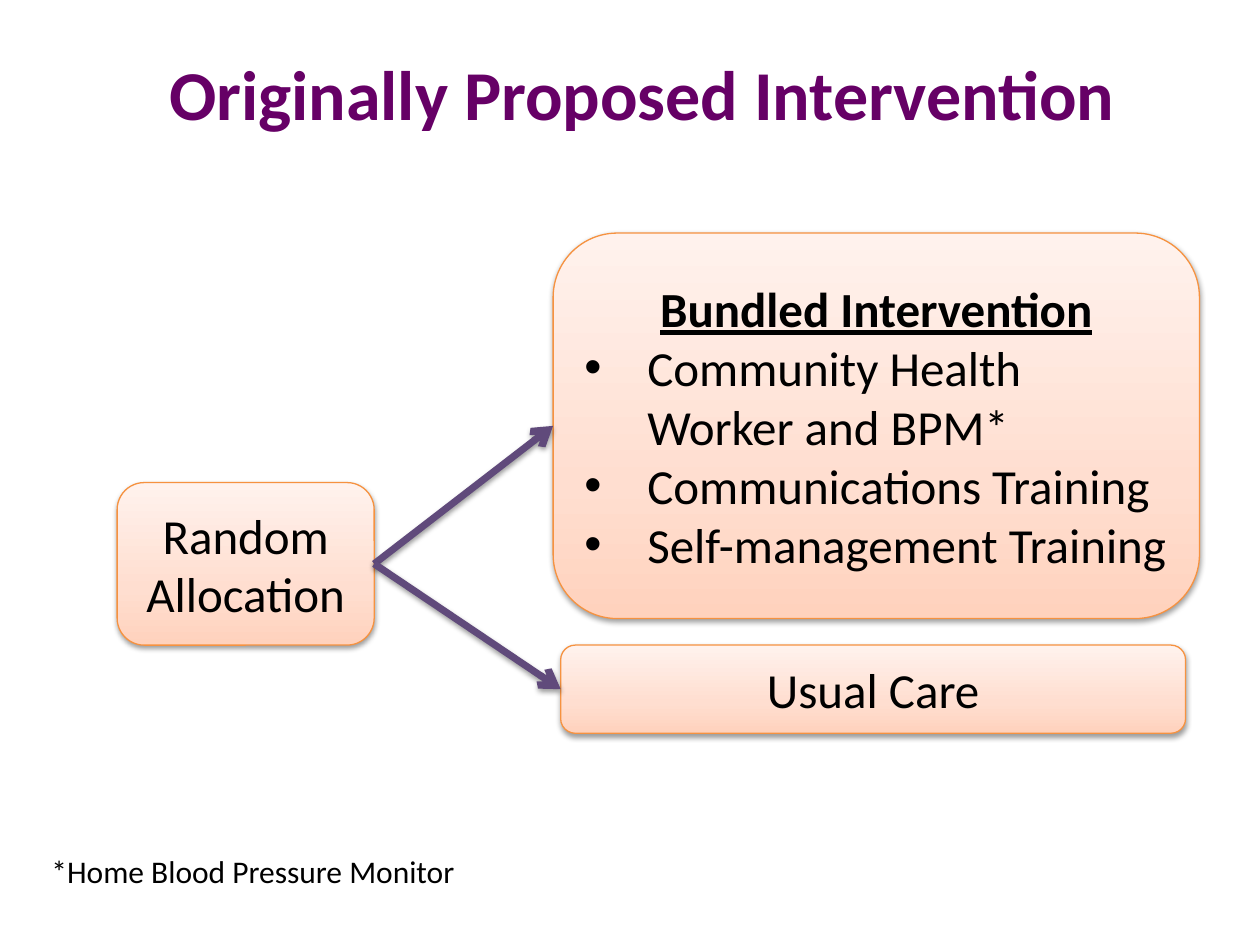
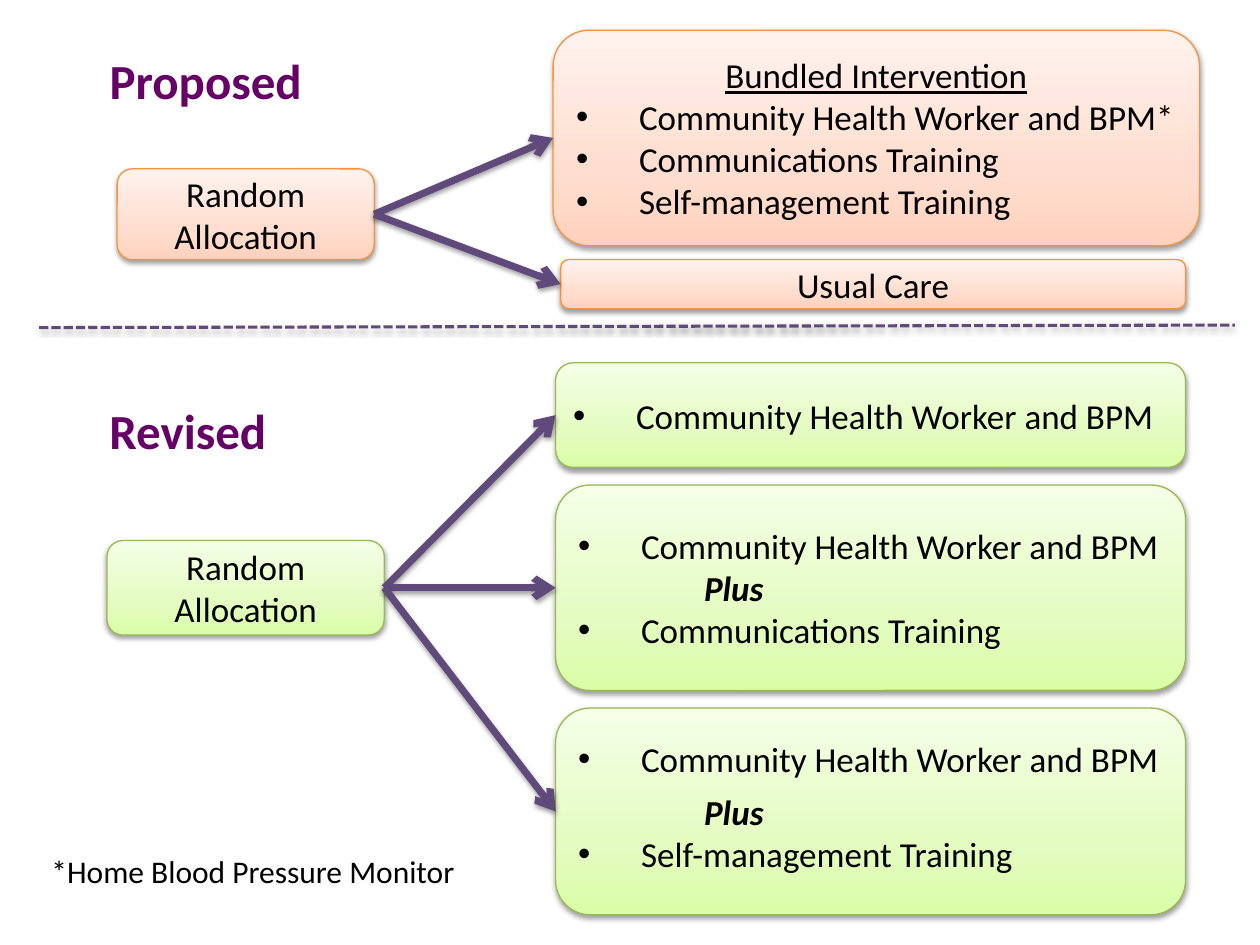
from copy import deepcopy
from dataclasses import dataclass

from lxml import etree
from pptx import Presentation
from pptx.dml.color import RGBColor
from pptx.enum.dml import MSO_LINE
from pptx.enum.shapes import MSO_CONNECTOR, MSO_SHAPE
from pptx.enum.text import MSO_ANCHOR, MSO_AUTO_SIZE, PP_ALIGN
from pptx.oxml.ns import qn
from pptx.util import Pt

PX = 9144  # EMU per px, 100 px to the inch
LEFT, CENTER = PP_ALIGN.LEFT, PP_ALIGN.CENTER
TOP, MIDDLE = MSO_ANCHOR.TOP, MSO_ANCHOR.MIDDLE
ROUND = MSO_SHAPE.ROUNDED_RECTANGLE
STRAIGHT = MSO_CONNECTOR.STRAIGHT
DASH = MSO_LINE.SQUARE_DOT
NO_FIT = MSO_AUTO_SIZE.NONE
LEFT_SITE, RIGHT_SITE = 1, 3
TITLE_ONLY = 5


@dataclass(frozen=True)
class Theme:
    font: str = "Calibri"
    ink: str = "000000"
    plum: str = "660066"
    arrow: str = "604A7B"
    # Edge colour, then gradient stops from the bottom up
    orange: tuple = ("F69240", "FFD2BD", "FFDED0", "FFF2ED")
    green: tuple = ("98B955", "DAFDA7", "E4FCC2", "F5FFE7")
    stops: tuple = (0, 0.35, 1)
    title: int = 40
    head: int = 28
    body: int = 20
    note: int = 18


T = Theme()
WORKER = "Community Health Worker and BPM"
COMMS = "Communications Training"
SELF = "Self-management Training"


# Text and effects
def write(frame, text, size=T.body, color=T.ink, bold=False, italic=False,
          under=False, align=LEFT, bullet=False, indent=0, before=0):
    """Add one paragraph to a text frame."""
    para = frame.paragraphs[0] if not frame.text else frame.add_paragraph()
    para.alignment = align
    para.space_before = Pt(before)
    run = para.add_run()
    run.text = text
    font = run.font
    font.name, font.size = T.font, Pt(size)
    font.bold, font.italic, font.underline = bold, italic, under
    font.color.rgb = RGBColor.from_string(color)
    props = para._p.get_or_add_pPr()
    props.set("marL", str((50 if bullet else indent) * PX))
    props.set("indent", str(-50 * PX if bullet else 0))
    if bullet:
        etree.SubElement(props, qn("a:buFont"), typeface="Arial")
        etree.SubElement(props, qn("a:buChar"), char="•")
    else:
        etree.SubElement(props, qn("a:buNone"))


def shade(props):
    """Give shape properties a soft shadow that falls straight down."""
    effects = props.find(qn("a:effectLst"))
    if effects is None:
        effects = etree.SubElement(props, qn("a:effectLst"))
    shadow = etree.SubElement(
        effects, qn("a:outerShdw"), blurRad=str(Pt(3.1)), dist=str(Pt(1.6)),
        dir="5400000", rotWithShape="0")
    color = etree.SubElement(shadow, qn("a:srgbClr"), val=T.ink)
    etree.SubElement(color, qn("a:alpha"), val="38000")


# Basic parts
def place(shape, box):
    shape.left, shape.top, shape.width, shape.height = [n * PX for n in box]


def label(slide, box, text, **style):
    shape = slide.shapes.add_textbox(*[n * PX for n in box])
    shape.text_frame.word_wrap = True
    write(shape.text_frame, text, **style)


def title(slide, box, text, **style):
    shape = slide.shapes.title
    place(shape, box)
    frame = shape.text_frame
    frame.auto_size, frame.word_wrap = NO_FIT, True
    frame.vertical_anchor = TOP
    write(frame, text, color=T.plum, bold=True, **style)


def card(slide, box, tone):
    """Draw an empty rounded card with a gradient and a thin edge."""
    shape = slide.shapes.add_shape(ROUND, *[n * PX for n in box])
    edge, *colors = tone
    fill = shape.fill
    fill.gradient()
    fill.gradient_angle = 90
    props = shape._element.spPr
    ramp = props.find(".//" + qn("a:gsLst"))
    ramp.insert(1, deepcopy(ramp[0]))
    for stop, spot, color in zip(fill.gradient_stops, T.stops, colors):
        stop.position = spot
        stop.color.rgb = RGBColor.from_string(color)
    shape.line.color.rgb = RGBColor.from_string(edge)
    shape.line.width = Pt(0.75)
    shape.shadow.inherit = False
    shade(props)
    frame = shape.text_frame
    frame.word_wrap, frame.vertical_anchor = True, MIDDLE
    return shape


def stroke(slide, ends, width):
    line = slide.shapes.add_connector(STRAIGHT, *[n * PX for n in ends])
    line.line.color.rgb = RGBColor.from_string(T.arrow)
    line.line.width = Pt(width)
    shade(line._element.spPr)
    return line


def link(slide, start, end):
    """Join the right side of one card to the left side of another."""
    line = stroke(slide, (0, 0, 0, 0), 4)
    line.begin_connect(start, RIGHT_SITE)
    line.end_connect(end, LEFT_SITE)
    ends = line._element.spPr.find(qn("a:ln"))
    etree.SubElement(ends, qn("a:tailEnd"), type="arrow")


def footnote(slide):
    label(slide, (31, 671, 367, 40), "*Home Blood Pressure Monitor",
          size=T.note)


# Regions
def proposed(slide, box, size, bold):
    """Two arms: the bundle and usual care, scaled to the box height."""
    x, y, w, h = box

    def part(dx, top, wide, tall):
        return card(slide, (x + dx, y + round(top * h), wide,
                            round(tall * h)), T.orange)

    root = part(0, 0.5, 204, 0.325)
    bundle = part(346, 0, w - 346, 0.772)
    usual = part(352, 0.824, w - 363, 0.176)
    write(root.text_frame, "Random Allocation", size=size, align=CENTER)
    write(bundle.text_frame, "Bundled Intervention", size=size, bold=bold,
          under=True, align=CENTER)
    for item in (WORKER + "*", COMMS, SELF):
        write(bundle.text_frame, item, size=size, bullet=True)
    write(usual.text_frame, "Usual Care", size=size, align=CENTER)
    for arm in (bundle, usual):
        link(slide, root, arm)


def revised(slide, box):
    """Three arms stacked on the right, with the root level with the second."""
    x, y, w, _ = box
    gap, wide, tall = 14, 500, 75
    plans = ((83, None, 0), (163, COMMS, 0), (164, SELF, 6))
    arms = []
    for high, extra, before in plans:
        arm = card(slide, (x + w - wide, y, wide, high), T.green)
        frame = arm.text_frame
        write(frame, WORKER, bullet=True, before=before)
        if extra:
            write(frame, "Plus", bold=True, italic=True, indent=100,
                  before=before)
            write(frame, extra, bullet=True)
        arms.append(arm)
        y += high + gap
    # The last arm holds its text a little high
    frame.margin_top, frame.margin_bottom = 30 * PX, 39 * PX

    middle = (arms[1].top + arms[1].height // 2) // PX
    root = card(slide, (x, middle - tall // 2, 220, tall), T.green)
    write(root.text_frame, "Random Allocation", align=CENTER)
    for arm in arms:
        link(slide, root, arm)


# Slides
def first(slide):
    title(slide, (77, 35, 865, 77), "Originally Proposed Intervention",
          size=T.title, align=CENTER)
    proposed(slide, (93, 185, 859, 397), T.head, True)
    footnote(slide)


def second(slide):
    title(slide, (77, 35, 292, 57), "Proposed", size=T.head)
    proposed(slide, (93, 24, 859, 221), T.body, False)
    revised(slide, (85, 288, 856, 438))
    stroke(slide, (31, 260, 980, 258), 1.75).line.dash_style = DASH
    label(slide, (77, 313, 292, 57), "Revised", size=T.head, color=T.plum,
          bold=True)
    footnote(slide)


def main():
    deck = Presentation()
    deck.slide_width, deck.slide_height = 1000 * PX, 750 * PX
    for build in (first, second):
        build(deck.slides.add_slide(deck.slide_layouts[TITLE_ONLY]))
    deck.save("out.pptx")


if __name__ == "__main__":
    main()
